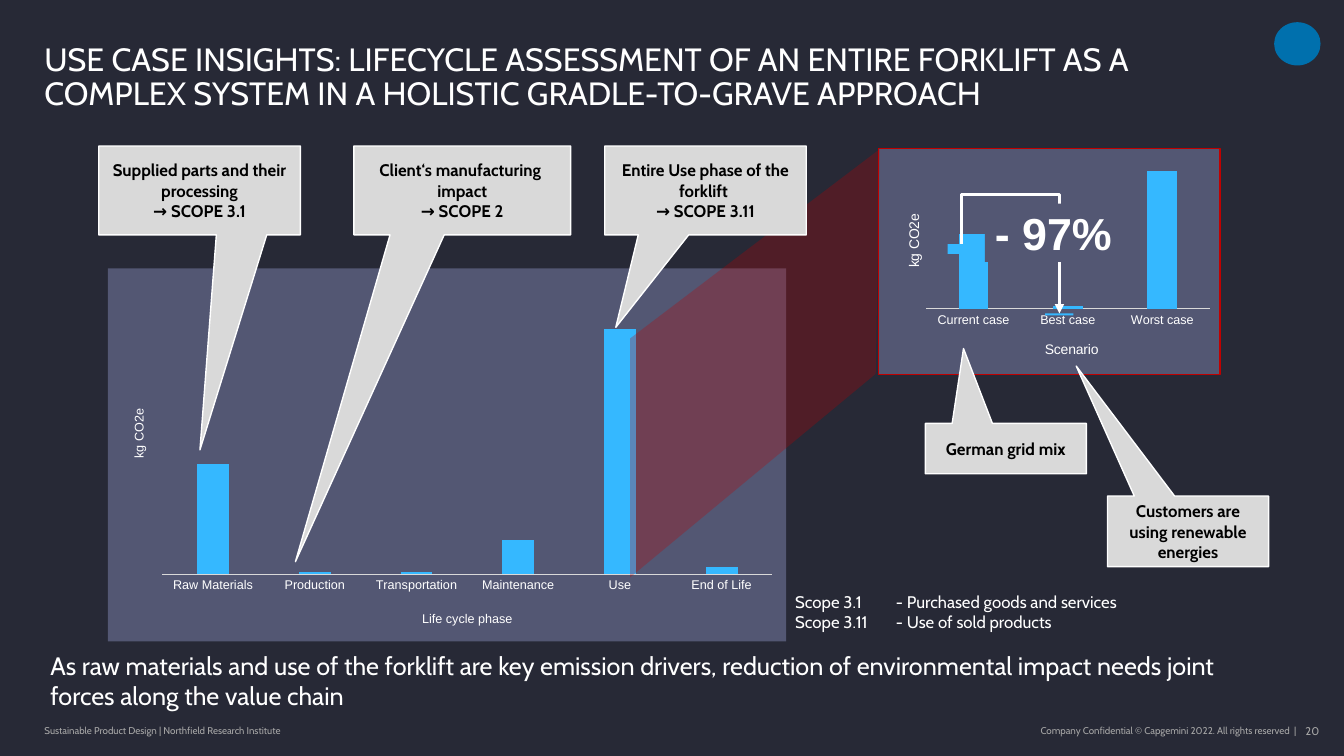
"""Build the forklift lifecycle assessment slide."""
from dataclasses import dataclass

from pptx import Presentation
from pptx.chart.data import CategoryChartData
from pptx.dml.color import RGBColor
from pptx.enum import chart as charts, shapes, text as texts
from pptx.oxml import parse_xml
from pptx.oxml import ns
from pptx.util import Cm, Pt

BACKGROUND = RGBColor(0x27, 0x29, 0x36)
PANEL = RGBColor(0x53, 0x57, 0x73)
BAR = RGBColor(0x35, 0xB8, 0xFF)
RED = RGBColor(0xC0, 0x00, 0x00)
LIGHT = RGBColor(0xD9, 0xD9, 0xD9)
MUTED = RGBColor(0xA6, 0xA6, 0xA6)
EMBLEM = RGBColor(0x00, 0x70, 0xAD)
WHITE = RGBColor(0xFF, 0xFF, 0xFF)
BLACK = RGBColor(0x00, 0x00, 0x00)

Box = tuple[float, float, float, float]
NO_INSETS: Box = (0, 0, 0, 0)
BOX_INSETS: Box = (0.25, 0.13, 0.25, 0.13)
MIDDLE = texts.MSO_ANCHOR.MIDDLE
RIGHT = texts.PP_ALIGN.RIGHT


@dataclass
class Callout:
    """A speech box whose tip is given relative to its size."""
    box: Box
    tip: tuple[float, float]
    text: str


@dataclass
class BarChart:
    """A column chart with its layout as fractions of the chart."""
    box: Box
    bars: dict[str, int]
    maximum: int
    plot: Box
    category_title: str
    category_title_at: tuple[float, float]
    value_title_at: tuple[float, float]
    title_size: float
    border: RGBColor | None = None


CHARTS = [
    BarChart((22.12, 3.73, 8.64, 5.72),
             {"Current case": 54, "Best case": 2, "Worst case": 100}, 100,
             (0.14, 0.1, 0.83, 0.61), "Scenario", (0.48, 0.84), (0.07, 0.28), 10, RED),
    BarChart((2.72, 6.76, 17.09, 9.4),
             {"Raw Materials": 45, "Production": 1, "Transportation": 1,
              "Maintenance": 14, "Use": 100, "End of Life": 3}, 120,
             (0.08, 0.03, 0.9, 0.79), "Life cycle phase", (0.46, 0.91), (0.03, 0.37), 9),
]
CALLOUTS = [
    Callout((2.49, 3.68, 5.08, 2.24), (0.002, 2.918),
            "Supplied parts and their processing\v→ SCOPE 3.1"),
    Callout((8.92, 3.68, 5.46, 2.24), (-0.77, 4.176),
            "Client‘s manufacturing \vimpact\v→ SCOPE 2"),
    Callout((27.91, 12.5, 4.06, 1.78), (-0.694, -2.34),
            "Customers are using renewable energies"),
    Callout((23.32, 10.67, 4.06, 1.27), (-0.263, -1.986), "German grid mix"),
    Callout((15.24, 3.68, 5.08, 2.24), (-0.445, 1.54),
            "Entire Use phase of the forklift \v→ SCOPE 3.11"),
]
USE_PHASE_BEAM = [(15.88, 8.53), (15.88, 14.55), (22.07, 9.42), (22.17, 3.76)]
BAR_PATCHES: list[Box] = [(23.88, 6.15, 0.71, 0.25), (26.34, 7.9, 0.71, 0.05)]


def write(shape, text: str, *, size: float, color: RGBColor = WHITE, font: str = "Cabin",
          bold: bool = False, align=texts.PP_ALIGN.LEFT, anchor=texts.MSO_ANCHOR.TOP,
          insets: Box = BOX_INSETS, spacing: float = 1.0) -> None:
    """Fill a shape with formatted text."""
    frame = shape.text_frame
    frame.text = text
    frame.word_wrap = True
    frame.vertical_anchor = anchor
    frame.margin_left, frame.margin_top, frame.margin_right, frame.margin_bottom = map(Cm, insets)
    for paragraph in frame.paragraphs:
        paragraph.alignment = align
        paragraph.line_spacing = spacing
        for run in paragraph.runs:
            run.font.name, run.font.size, run.font.bold = font, Pt(size), bold
            run.font.color.rgb = color


def add_text(slide, box: Box, text: str, **text_format) -> None:
    """Add a text box."""
    write(slide.shapes.add_textbox(*map(Cm, box)), text, **text_format)


def paint(shape, fill: RGBColor, line: RGBColor | None = None) -> None:
    """Set a flat fill and an optional thin outline."""
    shape.shadow.inherit = False
    shape.fill.solid()
    shape.fill.fore_color.rgb = fill
    if line is None:
        shape.line.fill.background()
    else:
        shape.line.color.rgb = line
        shape.line.width = Pt(1)


def add_filled(slide, kind, box: Box, fill: RGBColor, line: RGBColor | None = None):
    """Add a painted preset shape."""
    shape = slide.shapes.add_shape(kind, *map(Cm, box))
    paint(shape, fill, line)
    return shape


def add_callout(slide, callout: Callout) -> None:
    """Add a grey speech box."""
    shape = add_filled(slide, shapes.MSO_SHAPE.RECTANGULAR_CALLOUT, callout.box, LIGHT, WHITE)
    for index, offset in enumerate(callout.tip):
        shape.adjustments[index] = offset
    write(shape, callout.text, size=12, color=BLACK, bold=True,
          align=texts.PP_ALIGN.CENTER, anchor=MIDDLE)


def layout_xml(fractions: tuple[float, ...], inner: bool = False):
    """Return a manual chart layout element."""
    target = '<c:layoutTarget val="inner"/>' if inner else ""
    modes = '<c:xMode val="edge"/><c:yMode val="edge"/>'
    values = "".join(f'<c:{tag} val="{value}"/>' for tag, value in zip("xywh", fractions))
    return parse_xml(f'<c:layout {ns.nsdecls("c")}><c:manualLayout>{target}{modes}{values}'
                     "</c:manualLayout></c:layout>")


def place(parent, index: int, layout) -> None:
    """Replace the layout of a chart part."""
    for old_layout in parent.findall(ns.qn("c:layout")):
        parent.remove(old_layout)
    parent.insert(index, layout)


def add_axis_title(axis, text: str, position: tuple[float, float], size: float,
                   rotation: int = 0) -> None:
    """Add a positioned axis title."""
    title = axis.axis_title
    title.text_frame.text = text
    font = title.text_frame.paragraphs[0].runs[0].font
    font.name, font.size, font.bold = "Arial", Pt(size), False
    font.color.rgb = WHITE
    body = title.element.find(".//" + ns.qn("a:bodyPr"))
    body.set("rot", str(rotation * 60000))
    body.set("vert", "horz")
    place(title.element, 1, layout_xml(position))


def add_bar_chart(slide, spec_chart: BarChart) -> None:
    """Add a column chart on a coloured panel."""
    data = CategoryChartData()
    data.categories = list(spec_chart.bars)
    data.add_series("Series 1", list(spec_chart.bars.values()))
    chart = slide.shapes.add_chart(charts.XL_CHART_TYPE.COLUMN_CLUSTERED,
                                   *map(Cm, spec_chart.box), data).chart
    chart.has_legend = chart.has_title = False
    chart.font.name, chart.font.size = "Arial", Pt(9)
    chart.font.color.rgb = WHITE
    line = "<a:noFill/>"
    if spec_chart.border is not None:
        line = f'<a:solidFill><a:srgbClr val="{spec_chart.border}"/></a:solidFill>'
    chart.element.find(ns.qn("c:txPr")).addprevious(parse_xml(
        f'<c:spPr {ns.nsdecls("c", "a")}><a:solidFill><a:srgbClr val="{PANEL}"/></a:solidFill>'
        f'<a:ln w="12700">{line}</a:ln></c:spPr>'))
    plot = chart.plots[0]
    plot.gap_width, plot.overlap, plot.vary_by_categories = 219, -27, False
    plot.series[0].format.fill.solid()
    plot.series[0].format.fill.fore_color.rgb = BAR
    categories, values = chart.category_axis, chart.value_axis
    categories.major_tick_mark = values.major_tick_mark = charts.XL_TICK_MARK.NONE
    categories.format.line.color.rgb = LIGHT
    categories.format.line.width = Pt(0.75)
    values.has_major_gridlines = False
    values.minimum_scale, values.maximum_scale = 0, spec_chart.maximum
    values.tick_label_position = charts.XL_TICK_LABEL_POSITION.NONE
    values.format.line.fill.background()
    add_axis_title(categories, spec_chart.category_title, spec_chart.category_title_at,
                   spec_chart.title_size)
    add_axis_title(values, "kg CO2e", spec_chart.value_title_at, spec_chart.title_size, -90)
    place(chart.element.find(".//" + ns.qn("c:plotArea")), 0, layout_xml(spec_chart.plot, True))


def add_beam(slide) -> None:
    """Add the translucent beam from the use bar to the scenario chart."""
    start, *others = [(Cm(x), Cm(y)) for x, y in USE_PHASE_BEAM]
    builder = slide.shapes.build_freeform(*start)
    builder.add_line_segments(others, close=True)
    beam = builder.convert_to_shape()
    paint(beam, RED)
    color = beam.element.spPr.find(ns.qn("a:solidFill"))[0]
    color.append(parse_xml(f'<a:alpha {ns.nsdecls("a")} val="27000"/>'))


def add_reduction_arrow(slide) -> None:
    """Add the bent arrow from the current case to the best case."""
    arrow = slide.shapes.add_connector(shapes.MSO_CONNECTOR.ELBOW,
                                       Cm(26.34), Cm(5.79), Cm(24.59), Cm(8.26))
    arrow.line.color.rgb = WHITE
    arrow.line.width = Pt(2.25)
    properties = arrow.element.spPr
    properties.find(ns.qn("a:xfrm")).set("rot", str(270 * 60000))
    geometry = properties.find(ns.qn("a:prstGeom"))
    for guides in list(geometry):
        geometry.remove(guides)
    geometry.append(parse_xml(f'<a:avLst {ns.nsdecls("a")}>'
                              '<a:gd name="adj1" fmla="val -71500"/></a:avLst>'))
    properties.find(ns.qn("a:ln")).append(
        parse_xml(f'<a:tailEnd {ns.nsdecls("a")} type="triangle"/>'))
    properties.append(parse_xml(f'<a:effectLst {ns.nsdecls("a")}/>'))


def main() -> None:
    """Build and save the presentation."""
    presentation = Presentation()
    presentation.slide_width, presentation.slide_height = Cm(33.87), Cm(19.05)
    slide = presentation.slides.add_slide(presentation.slide_layouts[6])
    slide.background.fill.solid()
    slide.background.fill.fore_color.rgb = BACKGROUND
    add_filled(slide, shapes.MSO_SHAPE.OVAL, (32.11, 0.56, 1.17, 1.09), EMBLEM)
    add_text(slide, (1.12, 18.11, 9.47, 0.61),
             "Sustainable Product Design | Northfield Research Institute",
             size=7, color=MUTED, anchor=MIDDLE, insets=NO_INSETS)
    add_text(slide, (32.61, 18.11, 0.64, 0.61), "20", size=8, color=MUTED, align=RIGHT,
             insets=(0, 0.13, 0, 0.13))
    add_text(slide, (20.07, 18.11, 12.6, 0.61),
             "Company Confidential © Capgemini 2022. All rights reserved  |",
             size=7, color=MUTED, align=RIGHT, anchor=MIDDLE, insets=NO_INSETS)
    add_text(slide, (1.12, 1.09, 30.4, 1.98),
             "USE CASE INSIGHTS: LIFECYCLE ASSESSMENT OF AN ENTIRE FORKLIFT AS A "
             "COMPLEX SYSTEM IN A HOLISTIC GRADLE-TO-GRAVE APPROACH",
             size=23, insets=NO_INSETS, spacing=0.9)
    for bar_chart in CHARTS:
        add_bar_chart(slide, bar_chart)
    add_beam(slide)
    for callout in CALLOUTS:
        add_callout(slide, callout)
    add_text(slide, (1.02, 16.26, 30.81, 1.7),
             "As raw materials and use of the forklift are key emission drivers, reduction of "
             "environmental impact needs joint forces along the value chain", size=18)
    for patch in BAR_PATCHES:
        add_filled(slide, shapes.MSO_SHAPE.RECTANGLE, patch, BAR)
    add_reduction_arrow(slide)
    reduction = add_filled(slide, shapes.MSO_SHAPE.RECTANGLE, (24.82, 5.13, 3.78, 1.47), PANEL)
    write(reduction, "- 97%", size=32, font="Arial", bold=True, insets=(0.25, 0.05, 0.25, 0.05))
    add_text(slide, (19.79, 14.78, 10.11, 1.27),
             "Scope 3.1\t- Purchased goods and services\nScope 3.11\t- Use of sold products",
             size=12)
    presentation.save("out.pptx")


if __name__ == "__main__":
    main()
